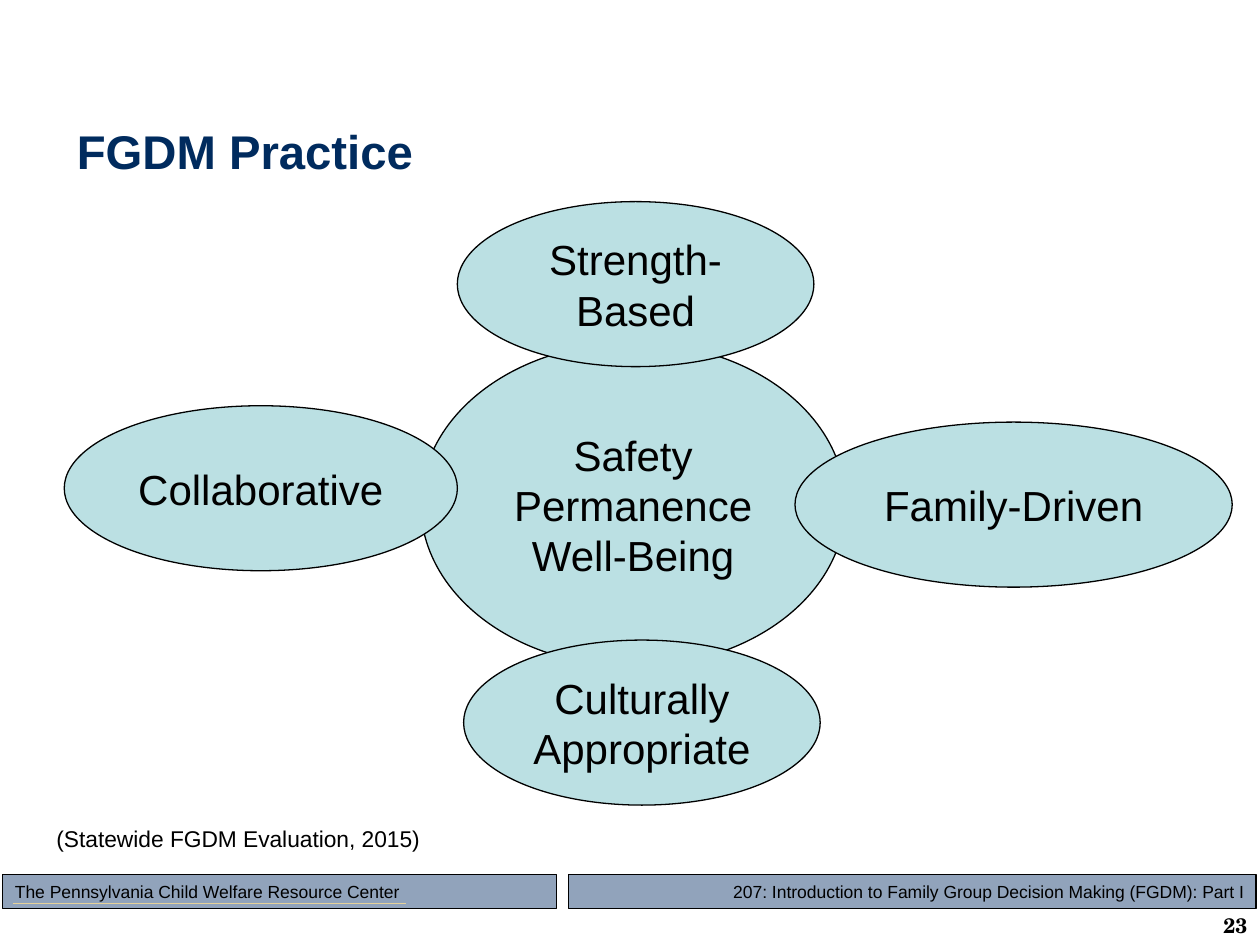
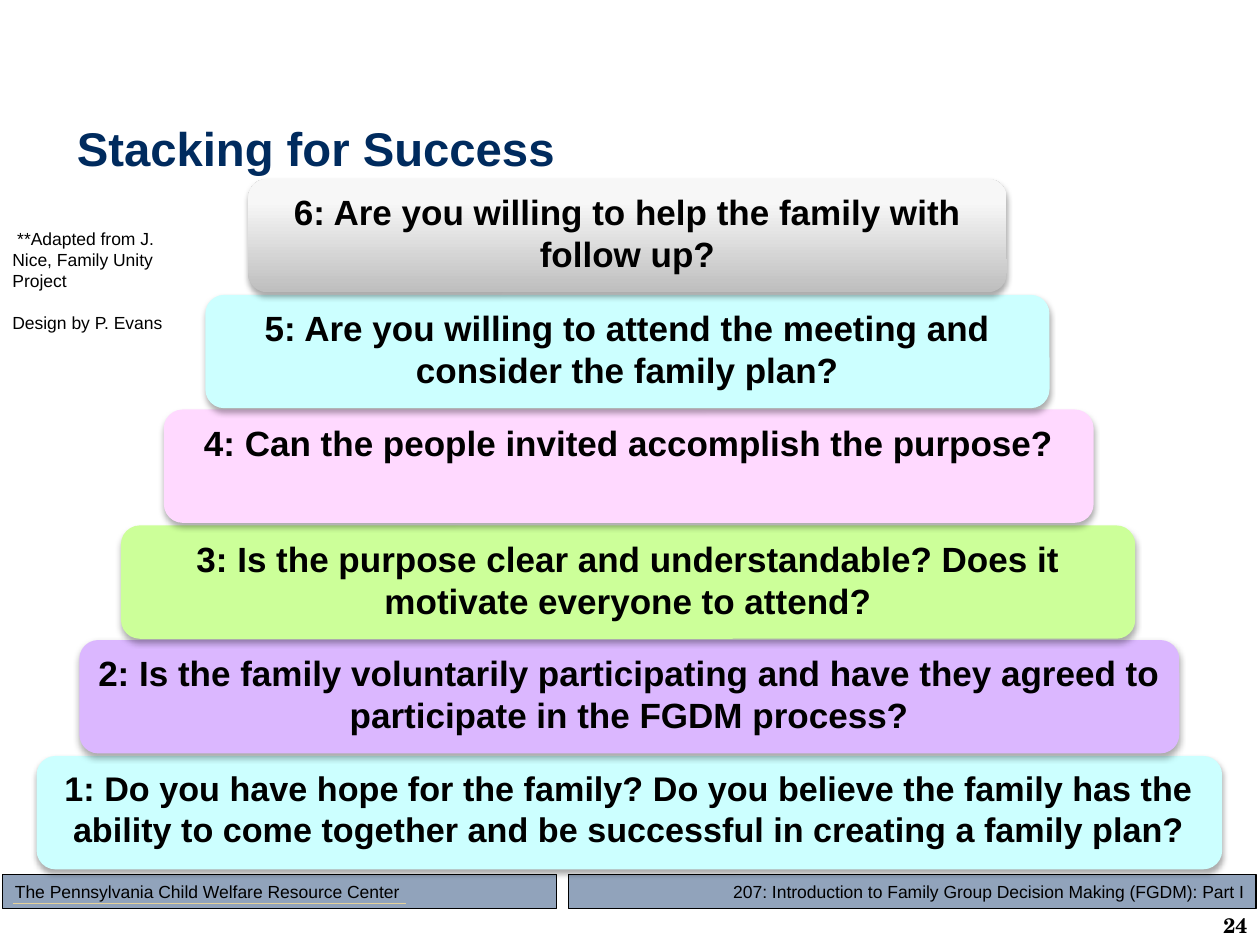
"""Build two slides on family group decision making practice."""
from dataclasses import dataclass

from lxml import etree
from pptx import Presentation
from pptx import util as u
from pptx.dml.color import RGBColor
from pptx.enum import shapes, text
from pptx.oxml import ns

PX = 9144
LEFT, CENTER, RIGHT = text.PP_ALIGN.LEFT, text.PP_ALIGN.CENTER, text.PP_ALIGN.RIGHT
TOP, MIDDLE = text.MSO_ANCHOR.TOP, text.MSO_ANCHOR.MIDDLE


@dataclass(frozen=True)
class Theme:
    """Colours, fonts and type sizes of the deck."""
    ink: str = "000000"
    title: str = "002B5E"
    band: str = "91A3BB"
    rule: str = "E5D199"
    oval: str = "BBE0E3"
    cyan: str = "CCFFFF"
    violet: str = "DBB7FF"
    green: str = "CCFF99"
    pink: str = "FFD9FF"
    silver: tuple = ("BEBEBE", "F7F7F7")
    font: str = "Arial"
    number_font: str = "TeX Gyre Schola"
    title_size: float = 27
    oval_size: float = 24
    bar_size: float = 20
    long_bar_size: float = 19.5
    source_size: float = 13
    number_size: float = 12
    small_size: float = 10


T = Theme()

OVALS = [
    ((334, 272, 337, 257), ["Safety", "Permanence", "Well-Being"]),
    ((363, 160, 283, 131), ["Strength-Based"]),
    ((368, 508, 283, 131), ["Culturally Appropriate"]),
    ((631, 335, 347, 131), ["Family-Driven"]),
    ((51, 322, 312, 131), ["Collaborative"]),
]

BARS = [
    ("1: Do you have hope for the family? Do you believe the family has the "
     "ability to come together and be successful in creating a family plan?", T.cyan),
    ("2: Is the family voluntarily participating and have they agreed to "
     "participate in the FGDM process?", T.violet),
    ("3: Is the purpose clear and understandable? Does it motivate everyone to attend?",
     T.green),
    ("4: Can the people invited accomplish the purpose?", T.pink),
    ("5: Are you willing to attend the meeting and consider the family plan?", T.cyan),
    ("6: Are you willing to help the family with follow up?", T.silver),
]


def rgb(value):
    """Turn a hex string into a colour."""
    return RGBColor.from_string(value)


def emu(*lengths):
    """Turn px lengths into EMU."""
    return [round(n) * PX for n in lengths]


def write(sp, lines, size, align=LEFT, anchor=TOP, color=T.ink, bold=False,
          font=T.font, gap=0):
    """Fill a shape with evenly formatted paragraphs."""
    tf = sp.text_frame
    tf.word_wrap = True
    tf.auto_size = text.MSO_AUTO_SIZE.NONE
    tf.vertical_anchor = anchor
    for i, line in enumerate(lines):
        p = tf.add_paragraph() if i else tf.paragraphs[0]
        p.text = line
        p.alignment = align
        p.space_before = u.Pt(gap if i else 0)
        p.font.size = u.Pt(size)
        p.font.name = font
        p.font.bold = bold
        p.font.color.rgb = rgb(color)


def add_label(s, box, lines, size, **style):
    """Add a plain text box."""
    write(s.shapes.add_textbox(*emu(*box)), lines, size, **style)


def add_block(s, kind, box, fill, line_width=0.0):
    """Add a filled preset shape, outlined when a line width is given."""
    sp = s.shapes.add_shape(kind, *emu(*box))
    sp.shadow.inherit = False
    if isinstance(fill, tuple):
        sp.fill.gradient()
        sp.fill.gradient_angle = 90
        for stop, color, position in zip(sp.fill.gradient_stops, fill, (0, 0.8)):
            stop.color.rgb = rgb(color)
            stop.position = position
    else:
        sp.fill.solid()
        sp.fill.fore_color.rgb = rgb(fill)
    if line_width:
        sp.line.color.rgb = rgb(T.ink)
        sp.line.width = u.Pt(line_width)
    else:
        sp.line.fill.background()
    return sp


def drop_shadow(sp):
    """Give a shape a soft shadow below it."""
    effects = sp.element.spPr.find(ns.qn("a:effectLst"))
    shadow = etree.SubElement(effects, ns.qn("a:outerShdw"), blurRad=str(u.Pt(3.5)),
                              dist=str(u.Pt(2.2)), dir="5400000", rotWithShape="0")
    color = etree.SubElement(shadow, ns.qn("a:srgbClr"), val=T.ink)
    etree.SubElement(color, ns.qn("a:alpha"), val="32000")


def add_footer(s, number):
    """Add the two footer bands, the rule and the page number."""
    rect = shapes.MSO_SHAPE.RECTANGLE
    course = add_block(s, rect, (451, 694, 546, 27), T.band, 0.75)
    write(course, ["207: Introduction to Family Group Decision Making (FGDM): Part I"],
          T.small_size, RIGHT, MIDDLE)
    center = add_block(s, rect, (2, 694, 440, 27), T.band, 0.5)
    write(center, ["The Pennsylvania Child Welfare Resource Center"],
          T.small_size, LEFT, MIDDLE)
    rule = s.shapes.add_connector(shapes.MSO_CONNECTOR.STRAIGHT, *emu(10, 717, 322, 717))
    rule.line.color.rgb = rgb(T.rule)
    rule.line.width = u.Pt(0.75)
    etree.SubElement(rule.element.spPr, ns.qn("a:effectLst"))
    add_label(s, (889, 724, 111, 21), [str(number)], T.number_size, align=RIGHT,
              anchor=MIDDLE, bold=True, font=T.number_font)


def add_slide(prs, title, top, number):
    """Add a slide with its title and footer."""
    s = prs.slides.add_slide(prs.slide_layouts[5])
    sp = s.shapes.title
    sp.left, sp.top, sp.width, sp.height = emu(51, top, 900, 65)
    write(sp, [title], T.title_size, LEFT, MIDDLE, T.title, True)
    add_footer(s, number)
    return s


def add_oval(s, box, lines):
    """Add one labelled oval of the practice diagram."""
    sp = add_block(s, shapes.MSO_SHAPE.OVAL, box, T.oval, 0.75)
    write(sp, lines, T.oval_size, CENTER, MIDDLE)


def add_bar(s, level, question, fill):
    """Add one bar of the stack, narrower and higher with each level."""
    box = (29 + 33.6 * level, 600 - 91.6 * level, 941 - 67.8 * level, 90)
    sp = add_block(s, shapes.MSO_SHAPE.ROUNDED_RECTANGLE, box, fill)
    drop_shadow(sp)
    size = T.bar_size if level else T.long_bar_size
    write(sp, [question], size, CENTER, bold=True)


def main():
    """Build and save the deck."""
    prs = Presentation()
    prs.slide_width, prs.slide_height = emu(1000, 750)

    s = add_slide(prs, "FGDM Practice", 87, 23)
    for box, lines in OVALS:
        add_oval(s, box, lines)
    add_label(s, (35, 650, 467, 32), ["(Statewide FGDM Evaluation, 2015)"], T.source_size)

    s = add_slide(prs, "Stacking for Success", 85, 24)
    for level, (question, fill) in enumerate(BARS):
        add_bar(s, level, question, fill)
    add_label(s, (0, 176, 141, 135),
              [" **Adapted from J. Nice, Family Unity Project", "Design by P. Evans"],
              T.small_size, gap=12)

    prs.save("out.pptx")


if __name__ == "__main__":
    main()
